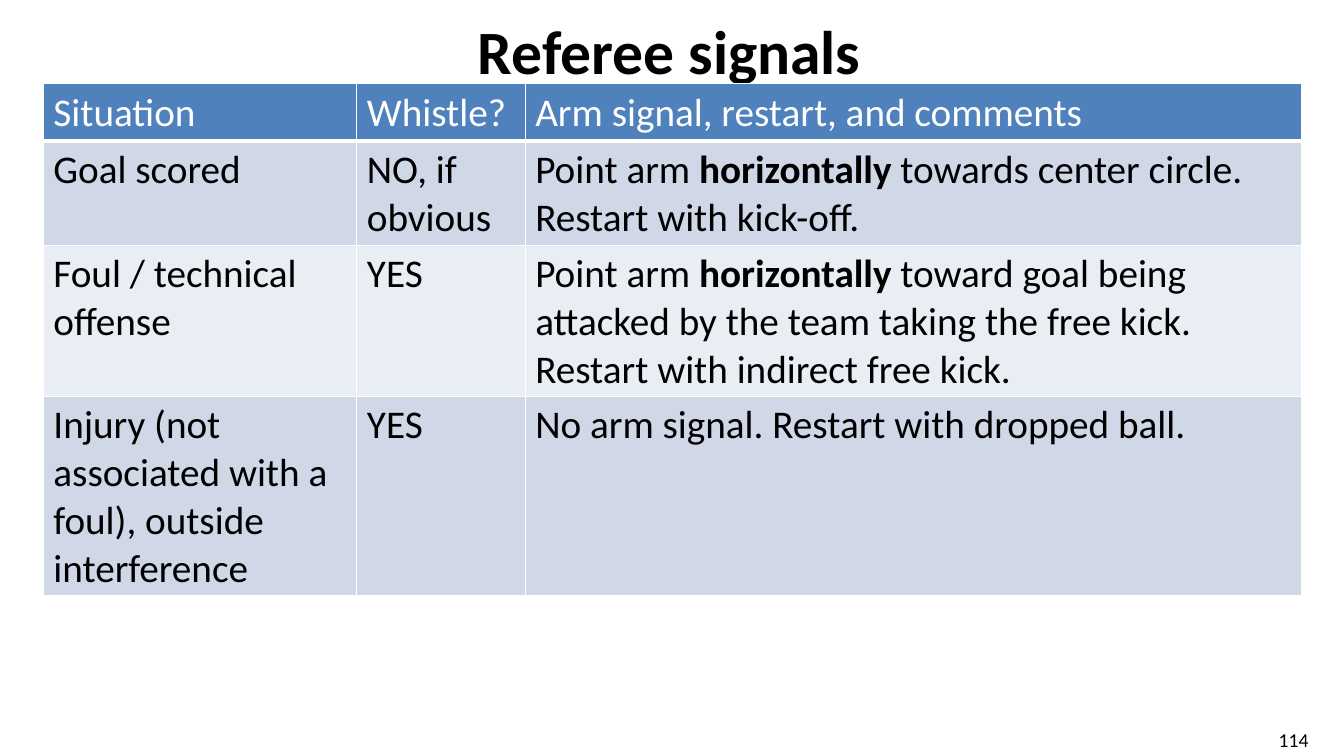
from dataclasses import dataclass

from lxml.etree import SubElement as Sub
from pptx import Presentation
from pptx.dml.color import RGBColor as Color
from pptx.enum.text import MSO_ANCHOR as Anchor, PP_ALIGN as Align
from pptx.oxml.ns import qn
from pptx.util import Inches, Pt


@dataclass(frozen=True)
class Theme:
    """Hold the colours, font and type sizes."""
    font: str = "Calibri"
    ink: str = "000000"
    white: str = "FFFFFF"
    head: str = "4F81BD"
    bands: tuple = ("D0D8E8", "E9EDF4")
    title: int = 44
    body: int = 28
    small: int = 14


THEME = Theme()
COLS = (3.11, 1.67, 7.7)
HIGHS = (0.57, 1.03, 1.5, 1.97)
ROWS = (
    ("Situation", "Whistle?", "Arm signal, restart, and comments"),
    ("Goal scored", "NO, if obvious",
     ("Point arm ", "horizontally",
      " towards center circle. Restart with kick-off.")),
    ("Foul / technical offense", "YES",
     ("Point arm ", "horizontally",
      " toward goal being attacked by the team taking the free kick. "
      "Restart with indirect free kick.")),
    ("Injury (not associated with a foul), outside interference", "YES",
     "No arm signal. Restart with dropped ball."),
)


def style(par, size, color, bold=False):
    """Set the font of a whole paragraph."""
    font = par.font
    font.name, font.size, font.bold = THEME.font, Pt(size), bold
    font.color.rgb = Color.from_string(color)


def label(slide, box, text, size, anchor, bold=False):
    """Place one centred line of text in the box."""
    frame = slide.shapes.add_textbox(*map(Inches, box)).text_frame
    frame.word_wrap = True
    frame.vertical_anchor = anchor
    par = frame.paragraphs[0]
    par.text = text
    par.alignment = Align.CENTER
    style(par, size, THEME.ink, bold)


def border(cell, base):
    """Draw white edges, with the given width at the bottom."""
    props = cell._tc.get_or_add_tcPr()
    for side, width in (("L", 1), ("R", 1), ("T", 1), ("B", base)):
        line = Sub(props, qn(f"a:ln{side}"), w=str(Pt(width)))
        fill = Sub(line, qn("a:solidFill"))
        Sub(fill, qn("a:srgbClr"), val=THEME.white)


def write(cell, text, fill, ink, base):
    """Fill one cell; the middle part of a split text is bold."""
    border(cell, base)
    cell.fill.solid()
    cell.fill.fore_color.rgb = Color.from_string(fill)
    par = cell.text_frame.paragraphs[0]
    style(par, THEME.body, ink)
    parts = (text,) if isinstance(text, str) else text
    for num, part in enumerate(parts):
        run = par.add_run()
        run.text = part
        if num == 1:
            run.font.bold = True


def signals(slide, left, top):
    """Place the table of signals with its corner at left and top."""
    box = map(Inches, (left, top, sum(COLS), sum(HIGHS)))
    table = slide.shapes.add_table(len(ROWS), len(COLS), *box).table
    table.first_row = table.horz_banding = False
    for col, width in zip(table.columns, COLS):
        col.width = Inches(width)
    for num, texts in enumerate(ROWS):
        table.rows[num].height = Inches(HIGHS[num])
        if num == 0:
            look = THEME.head, THEME.white, 3
        else:
            look = THEME.bands[(num - 1) % 2], THEME.ink, 1
        for col, text in enumerate(texts):
            write(table.cell(num, col), text, *look)


def main():
    """Build and save the slide."""
    deck = Presentation()
    deck.slide_width, deck.slide_height = Inches(13.33), Inches(7.5)
    slide = deck.slides.add_slide(deck.slide_layouts[6])
    label(slide, (2.6, 0.08, 8.08, 0.75), "Referee signals",
          THEME.title, Anchor.TOP, True)
    signals(slide, 0.43, 0.83)
    label(slide, (12.33, 7.17, 1, 0.33), "114", THEME.small, Anchor.MIDDLE)
    deck.save("out.pptx")


if __name__ == "__main__":
    main()
